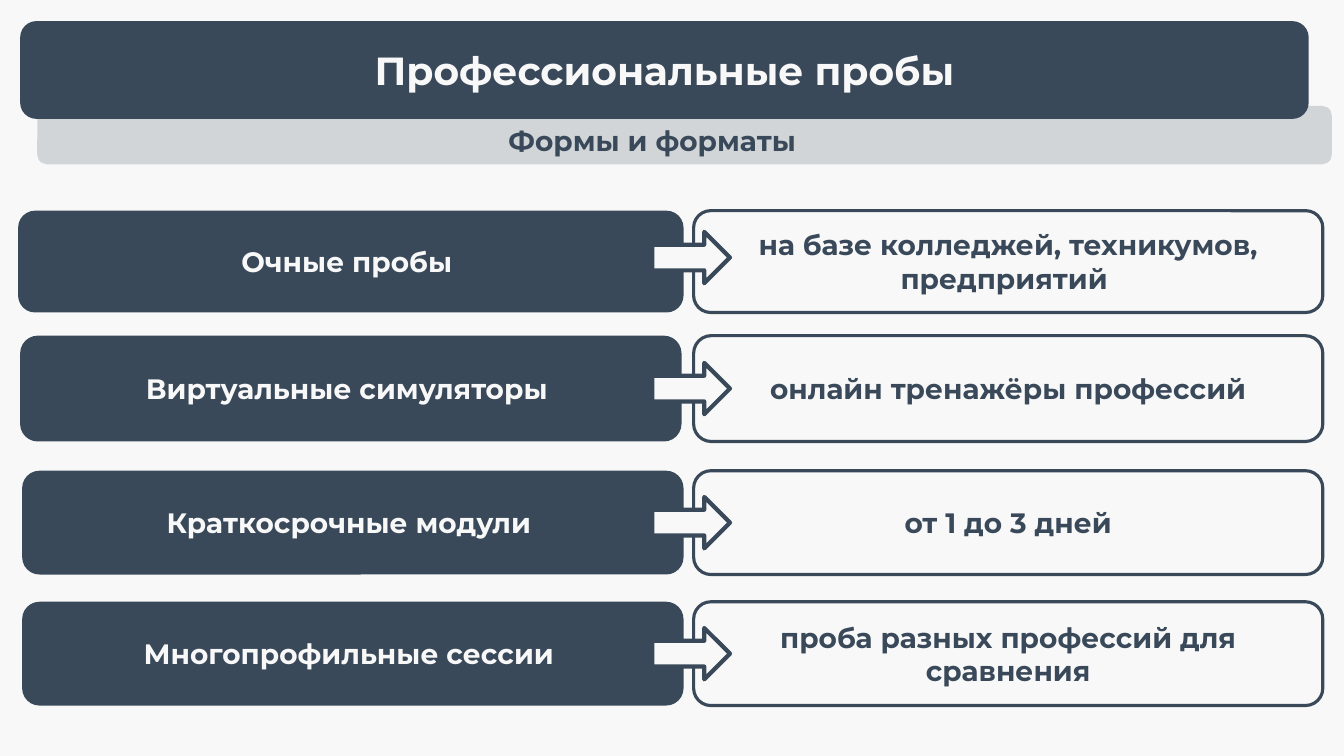
"""Builds the slide on forms of professional trials."""
from lxml.etree import SubElement
from pptx import Presentation
from pptx.dml.color import RGBColor
from pptx.enum.shapes import MSO_SHAPE
from pptx.enum.text import MSO_ANCHOR, PP_ALIGN
from pptx.oxml.ns import qn
from pptx.util import Inches, Pt

NAVY = RGBColor(0x39, 0x49, 0x59)
PAPER = RGBColor(0xF8, 0xF8, 0xF8)

TITLE = "Профессиональные пробы"
SUBTITLE = "Формы и форматы"
FORMS = [
    ("Очные пробы ", "на базе колледжей, техникумов, предприятий "),
    ("Виртуальные симуляторы ", "онлайн тренажёры профессий"),
    ("Краткосрочные модули ", "от 1 до 3 дней"),
    ("Многопрофильные сессии ", "проба разных профессий для сравнения"),
]

TITLE_BOX = (0.2, 0.21, 12.78, 0.97)
BAND_BOX = (0.37, 1.05, 12.84, 0.58)
SUBTITLE_BOX = (0.47, 1.18, 12, 0.44)
ROWS = [(2.09, 1.01), (3.33, 1.05), (4.67, 1.03), (5.97, 1.03)]
FORM_EDGES = [(0.18, 6.78), (0.2, 6.76), (0.22, 6.78), (0.22, 6.78)]
FORMAT_LEFT, FORMAT_WIDTH = 6.88, 6.24
ARROW_LEFT, ARROW_WIDTH, ARROW_HEIGHT = 6.47, 0.77, 0.51
ARROW_TOPS = [2.3, 3.6, 4.93, 6.23]


def write(holder, text, color, size=20):
    frame = holder.text_frame
    frame.word_wrap = True
    line = frame.paragraphs[0]
    line.alignment = PP_ALIGN.CENTER
    run = line.add_run()
    run.text = text
    run.font.color.rgb = color
    for key, value in {"name": "Montserrat", "size": Pt(size), "bold": True}.items():
        setattr(run.font, key, value)


def draw(slide, box, fill=None, outline=0, kind=MSO_SHAPE.ROUNDED_RECTANGLE):
    shape = slide.shapes.add_shape(kind, *map(Inches, box))
    shape.shadow.inherit = False
    shape.text_frame.vertical_anchor = MSO_ANCHOR.MIDDLE
    if fill is None:
        shape.fill.background()
    else:
        shape.fill.solid()
        shape.fill.fore_color.rgb = fill
    if outline:
        shape.line.color.rgb = NAVY
        shape.line.width = Pt(outline)
    else:
        shape.line.fill.background()
    return shape


def main():
    deck = Presentation()
    deck.slide_width, deck.slide_height = Inches(13.33), Inches(7.5)
    slide = deck.slides.add_slide(deck.slide_layouts[6])
    slide.background.fill.solid()
    slide.background.fill.fore_color.rgb = PAPER

    band = draw(slide, BAND_BOX, NAVY)
    tint = band.fill._xPr.find(qn("a:solidFill"))[0]
    SubElement(tint, qn("a:alpha"), val="20000")
    write(slide.shapes.add_textbox(*map(Inches, SUBTITLE_BOX)), SUBTITLE, NAVY)
    write(draw(slide, TITLE_BOX, NAVY), TITLE, PAPER, 28)

    for (form, details), (top, height), (left, right), arrow_top in zip(
        FORMS, ROWS, FORM_EDGES, ARROW_TOPS
    ):
        write(draw(slide, (left, top, right - left, height), NAVY), form, PAPER)
        format_box = (FORMAT_LEFT, top, FORMAT_WIDTH, height)
        write(draw(slide, format_box, outline=2.25), details, NAVY)
        arrow_box = (ARROW_LEFT, arrow_top, ARROW_WIDTH, ARROW_HEIGHT)
        draw(slide, arrow_box, PAPER, 3, MSO_SHAPE.RIGHT_ARROW)

    deck.save("out.pptx")


if __name__ == "__main__":
    main()
